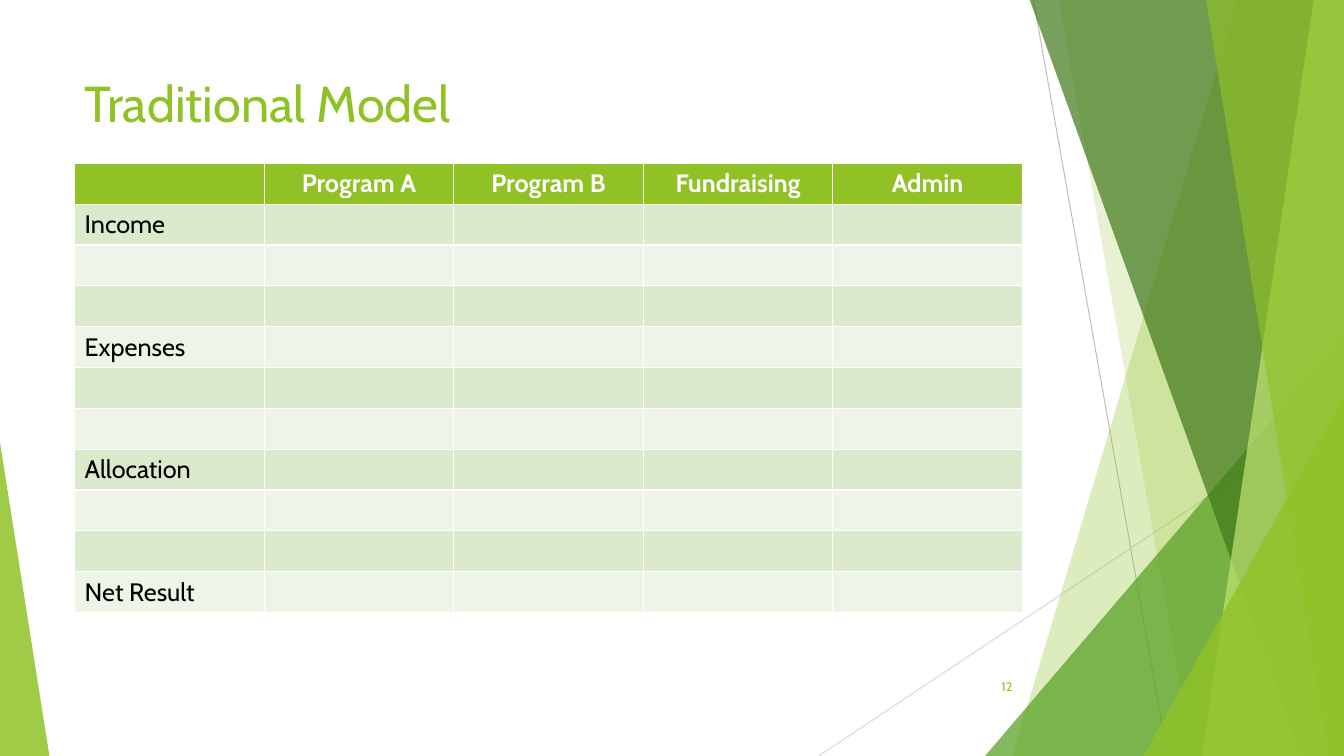
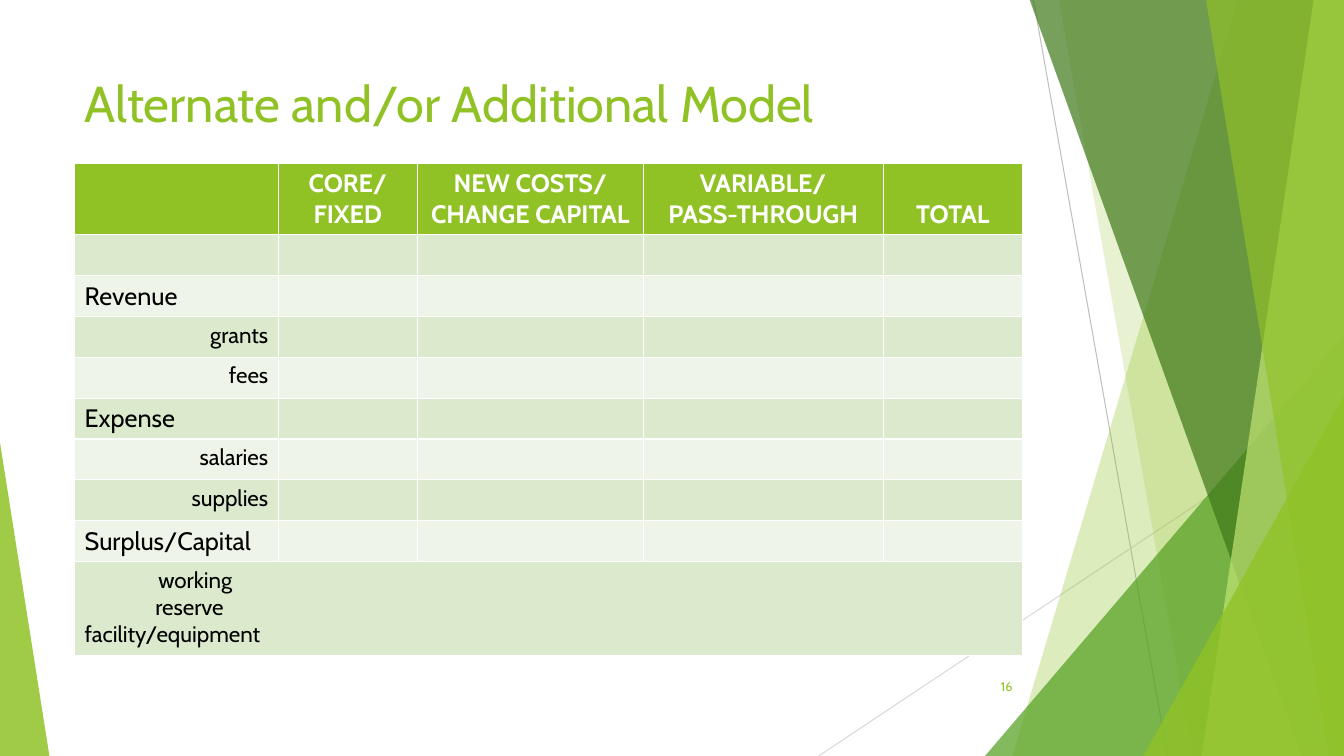
from lxml import etree
from pptx import Presentation
from pptx import util as u
from pptx.dml import color
from pptx.enum import shapes, text
from pptx.oxml import ns

FONT = "Cabin"
COLORS = {
    "green": "90C226", "leaf": "54A021", "forest": "3F7819", "lime": "C0E474",
    "band": "DBE9CD", "pale": "EEF4E8", "white": "FFFFFF", "black": "000000",
    "gray": "BFBFBF", "silver": "D9D9D9",
}
LEFT, WIDTH, TABLE_TOP = 0.74, 9.4, 1.62
TOP, RIGHT, BOTTOM = -0.01, 13.33, 7.5
ALIGN = text.PP_ALIGN


def rgb(name):
    return color.RGBColor.from_string(COLORS[name])


class Deck:
    def __init__(self):
        self.prs = Presentation()
        self.prs.slide_width = u.Inches(RIGHT)
        self.prs.slide_height = u.Inches(BOTTOM)
        self.s = None

    def slide(self, title, number):
        self.s = self.prs.slides.add_slide(self.prs.slide_layouts[5])
        self.backdrop()
        self.title(title)
        self.number(number)

    def style_text(self, p, words, size, name, align=ALIGN.LEFT, bold=False):
        p.text = words
        p.alignment = align
        p.font.name = FONT
        p.font.size = u.Pt(size)
        p.font.bold = bold
        p.font.color.rgb = rgb(name)

    def paint(self, sp, name, opacity):
        sp.shadow.inherit = False
        sp.line.fill.background()
        sp.fill.solid()
        sp.fill.fore_color.rgb = rgb(name)
        clr = sp._element.spPr.find(".//" + ns.qn("a:srgbClr"))
        etree.SubElement(clr, ns.qn("a:alpha"), val=str(opacity * 1000))

    def line(self, x1, y1, x2, y2, name):
        sp = self.s.shapes.add_connector(
            shapes.MSO_CONNECTOR.STRAIGHT, *map(u.Inches, (x1, y1, x2, y2)))
        sp.line.color.rgb = rgb(name)
        sp.line.width = u.Pt(0.75)
        etree.SubElement(sp._element.spPr, ns.qn("a:effectLst"))

    def shard(self, top_x, bottom_x, name, opacity):
        points = [(top_x, TOP), (RIGHT, TOP), (RIGHT, BOTTOM), (bottom_x, BOTTOM)]
        points = [(u.Inches(x), u.Inches(y)) for x, y in points]
        builder = self.s.shapes.build_freeform(*points[0])
        builder.add_line_segments(points[1:], close=True)
        self.paint(builder.convert_to_shape(), name, opacity)

    def triangle(self, left, top, width, apex, name, opacity):
        sp = self.s.shapes.add_shape(
            shapes.MSO_SHAPE.ISOSCELES_TRIANGLE,
            *map(u.Inches, (left, top, width, BOTTOM - top)))
        sp.adjustments[0] = apex
        self.paint(sp, name, opacity)

    def backdrop(self):
        self.line(10.25, 0, 11.58, BOTTOM, "gray")
        self.line(RIGHT, 4.03, 8.12, BOTTOM, "silver")
        self.shard(12.28, 10.04, "green", 30)
        self.shard(10.5, 11.83, "green", 20)
        self.triangle(9.77, 3.33, 3.56, 1, "leaf", 72)
        self.shard(10.21, 12.91, "forest", 70)
        self.shard(13.03, 11.92, "lime", 70)
        self.shard(11.96, 13.18, "green", 65)
        self.triangle(11.34, 3.93, 1.99, 1, "green", 80)
        self.triangle(0, 4.39, 0.49, 0, "green", 85)

    def title(self, words):
        sp = self.s.shapes.title
        sp.left, sp.top, sp.width, sp.height = map(
            u.Inches, (LEFT, 0.67, WIDTH, 1.44))
        tf = sp.text_frame
        tf.word_wrap = True
        tf.auto_size = text.MSO_AUTO_SIZE.NONE
        tf.vertical_anchor = text.MSO_ANCHOR.TOP
        self.style_text(tf.paragraphs[0], words, 36, "green")

    def number(self, value):
        sp = self.s.shapes.add_textbox(*map(u.Inches, (9.39, 6.61, 0.75, 0.4)))
        tf = sp.text_frame
        tf.word_wrap = True
        tf.vertical_anchor = text.MSO_ANCHOR.MIDDLE
        self.style_text(tf.paragraphs[0], str(value), 9, "green", ALIGN.RIGHT)

    def table(self, headers, labels, widths, heights, details=()):
        table = self.s.shapes.add_table(
            len(heights), len(widths),
            *map(u.Inches, (LEFT, TABLE_TOP, WIDTH, sum(heights)))).table
        for column, width in zip(table.columns, widths):
            column.width = u.Inches(width)
        for i, (row, height) in enumerate(zip(table.rows, heights)):
            row.height = u.Inches(height)
            for cell in row.cells:
                cell.fill.solid()
                cell.fill.fore_color.rgb = rgb(
                    "green" if i == 0 else "band" if i % 2 else "pale")
        for i, header in enumerate(headers, 1):
            cell = table.cell(0, i)
            cell.vertical_anchor = text.MSO_ANCHOR.BOTTOM
            self.lines(cell, header.split("\n"), 18, "white", ALIGN.CENTER, True)
        for i, label in enumerate(labels, 1):
            if label in details:
                self.lines(table.cell(i, 0), [label], 16, "black", ALIGN.RIGHT)
            elif label:
                self.lines(table.cell(i, 0), [label], 18, "black")
        return table

    def lines(self, cell, rows, *style):
        tf = cell.text_frame
        for i, words in enumerate(rows):
            p = tf.add_paragraph() if i else tf.paragraphs[0]
            self.style_text(p, words, *style)

    def merged_row(self, table, entries):
        last = len(table.rows) - 1
        cell = table.cell(last, 0)
        cell.merge(table.cell(last, len(table.columns) - 1))
        self.lines(cell, [words for words, _ in entries], 16, "black")
        for p, (_, indent) in zip(cell.text_frame.paragraphs, entries):
            p._p.get_or_add_pPr().set("marL", str(u.Inches(indent)))


def main():
    deck = Deck()
    deck.slide("Traditional Model", 12)
    deck.table(
        ["Program A", "Program B", "Fundraising", "Admin"],
        ["Income", "", "", "Expenses", "", "", "Allocation", "", "", "Net Result"],
        [WIDTH / 5] * 5, [4.46 / 11] * 11)

    deck.slide("Alternate and/or Additional Model", 16)
    details = ["grants", "fees", "salaries", "supplies"]
    table = deck.table(
        ["CORE/\nFIXED", "NEW COSTS/\nCHANGE CAPITAL",
         "VARIABLE/\nPASS-THROUGH", "TOTAL"],
        ["", "Revenue", *details[:2], "Expense", *details[2:], "Surplus/Capital"],
        [2.02, 1.38, 2.24, 2.38, 1.38], [0.71] + [4.46 / 11] * 8 + [0.93],
        details)
    deck.merged_row(
        table, [("working", 0.73), ("reserve", 0.7), ("facility/equipment", 0)])
    deck.prs.save("out.pptx")


if __name__ == "__main__":
    main()
